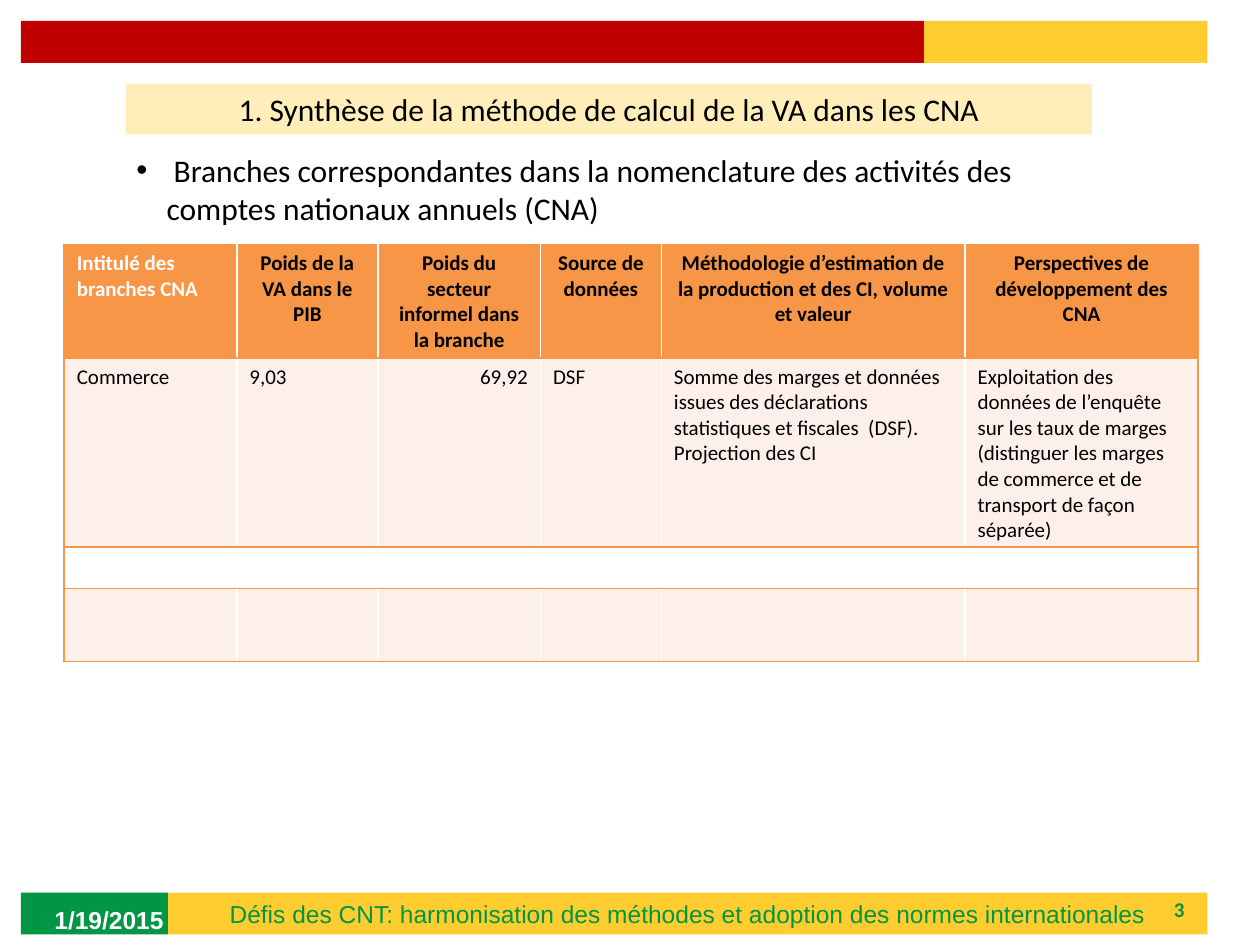
import pptx
import pptx.util
import pptx.dml.color
import pptx.enum.shapes
import pptx.enum.text
import pptx.oxml.ns
import lxml.etree

Pt = pptx.util.Pt
RGB = pptx.dml.color.RGBColor
Align = pptx.enum.text.PP_ALIGN
Anchor = pptx.enum.text.MSO_ANCHOR
qn = pptx.oxml.ns.qn

GREEN = RGB(0x00, 0x96, 0x44)
GOLD = RGB(0xFF, 0xCD, 0x2F)
RED = RGB(0xC0, 0x00, 0x00)
CREAM = RGB(0xFF, 0xEE, 0xB9)
ORANGE = RGB(0xF7, 0x96, 0x46)
ROSE = RGB(0xFD, 0xEF, 0xE9)
WHITE = RGB(0xFF, 0xFF, 0xFF)
BLACK = RGB(0x00, 0x00, 0x00)

UNIT = pptx.util.Inches(10) // 60

WIDTHS = [1.37, 1.12, 1.29, 0.96, 2.41, 1.85]
HEIGHTS = [0.9, 1.49, 0.33, 0.58]
FILLS = [ORANGE, ROSE, WHITE, ROSE]
HEADS = [
    "Intitulé des branches CNA",
    "Poids de la VA dans le PIB",
    "Poids du secteur informel dans la branche",
    "Source de données",
    "Méthodologie d’estimation de la production et des CI, volume et valeur",
    "Perspectives de développement des CNA",
]
TRADE = [
    "Commerce",
    "9,03",
    "69,92",
    "DSF",
    "Somme des marges et données issues des déclarations statistiques et "
    "fiscales  (DSF). Projection des CI",
    "Exploitation des données de l’enquête sur les taux de marges "
    "(distinguer les marges de commerce et de transport de façon séparée)",
]
ROWS = [HEADS, TRADE, [""] * 6, [""] * 6]


def grid(*cells):
    return [round(cell * UNIT) for cell in cells]


def node(parent, tag, **attrs):
    return lxml.etree.SubElement(parent, qn(tag), attrs)


def style(para, size, color, face="Calibri", bold=False, align=Align.LEFT):
    para.alignment = align
    font = para.font
    font.name, font.size, font.bold = face, Pt(size), bold
    font.color.rgb = color


def bar(slide, place, color):
    box = slide.shapes.add_shape(
        pptx.enum.shapes.MSO_SHAPE.RECTANGLE, *grid(*place))
    box.shadow.inherit = False
    box.fill.solid()
    box.fill.fore_color.rgb = color
    box.line.fill.background()
    return box


def write(box, text, anchor=Anchor.MIDDLE):
    frame = box.text_frame
    frame.word_wrap = True
    frame.vertical_anchor = anchor
    para = frame.paragraphs[0]
    para.text = text
    return para


def label(slide, place, text):
    return write(slide.shapes.add_textbox(*grid(*place)), text)


def bullet(para):
    props = para._p.get_or_add_pPr()
    indent = pptx.util.Inches(0.24)
    props.set("marL", str(indent))
    props.set("indent", str(-indent))
    node(props, "a:buFont", typeface="Arial")
    node(props, "a:buChar", char="•")


def edge(cell, sides):
    props = cell._tc.get_or_add_tcPr()
    for side in sides:
        line = node(props, "a:ln" + side, w=str(Pt(1)))
        fill = node(line, "a:solidFill")
        node(fill, "a:srgbClr", val=str(ORANGE))


def place_of(row, col):
    if row == 0 and col > 0:
        return Align.CENTER
    return Align.RIGHT if (row, col) == (1, 2) else Align.LEFT


def fill_cell(cell, row, col):
    sides = {0: "LTB", len(WIDTHS) - 1: "RTB"}.get(col, "TB")
    edge(cell, sides)
    cell.fill.solid()
    cell.fill.fore_color.rgb = FILLS[row]
    para = cell.text_frame.paragraphs[0]
    text = ROWS[row][col]
    if text:
        para.text = text
        color = WHITE if row == col == 0 else BLACK
        style(para, 12, color, bold=row == 0, align=place_of(row, col))
    else:
        node(para._p, "a:endParaRPr", sz="1200")


def add_grid(slide):
    left, top = grid(3.06, 11.64)
    table = slide.shapes.add_table(
        len(ROWS), len(WIDTHS), left, top,
        pptx.util.Inches(sum(WIDTHS)), pptx.util.Inches(sum(HEIGHTS))).table
    for col, width in enumerate(WIDTHS):
        table.columns[col].width = pptx.util.Inches(width)
    for row, height in enumerate(HEIGHTS):
        table.rows[row].height = pptx.util.Inches(height)
        for col in range(len(WIDTHS)):
            fill_cell(table.cell(row, col), row, col)


def add_frame(slide):
    bar(slide, (1, 42.5, 7, 2), GREEN)
    foot = bar(slide, (8, 42.5, 49.5, 2), GOLD)
    para = write(foot, "Défis des CNT: harmonisation des méthodes et "
                       "adoption des normes internationales")
    style(para, 14, GREEN, "Arial", align=Align.CENTER)
    page = label(slide, (43, 42.5, 14, 1.6), "3")
    style(page, 12, GREEN, bold=True, align=Align.RIGHT)
    bar(slide, (1, 1, 43, 2), RED)
    bar(slide, (44, 1, 13.5, 2), GOLD)
    date = label(slide, (2, 42.6, 14, 2.4), "1/19/2015")
    style(date, 14, WHITE, "Arial", bold=True)


def add_heads(slide):
    title = bar(slide, (6, 4, 46, 2.4), CREAM)
    para = write(title, "1. Synthèse de la méthode de calcul de la VA "
                        "dans les CNA", Anchor.TOP)
    style(para, 18, BLACK, align=Align.CENTER)
    topic = bar(slide, (5.9, 6.9, 46, 4.25), WHITE)
    para = write(topic, " Branches correspondantes dans la nomenclature des "
                        "activités des comptes nationaux annuels (CNA)",
                 Anchor.TOP)
    bullet(para)
    style(para, 18, BLACK)


def main():
    deck = pptx.Presentation()
    deck.slide_width, deck.slide_height = grid(60, 45)
    slide = deck.slides.add_slide(deck.slide_layouts[6])
    add_frame(slide)
    add_heads(slide)
    add_grid(slide)
    deck.save("out.pptx")


if __name__ == "__main__":
    main()
